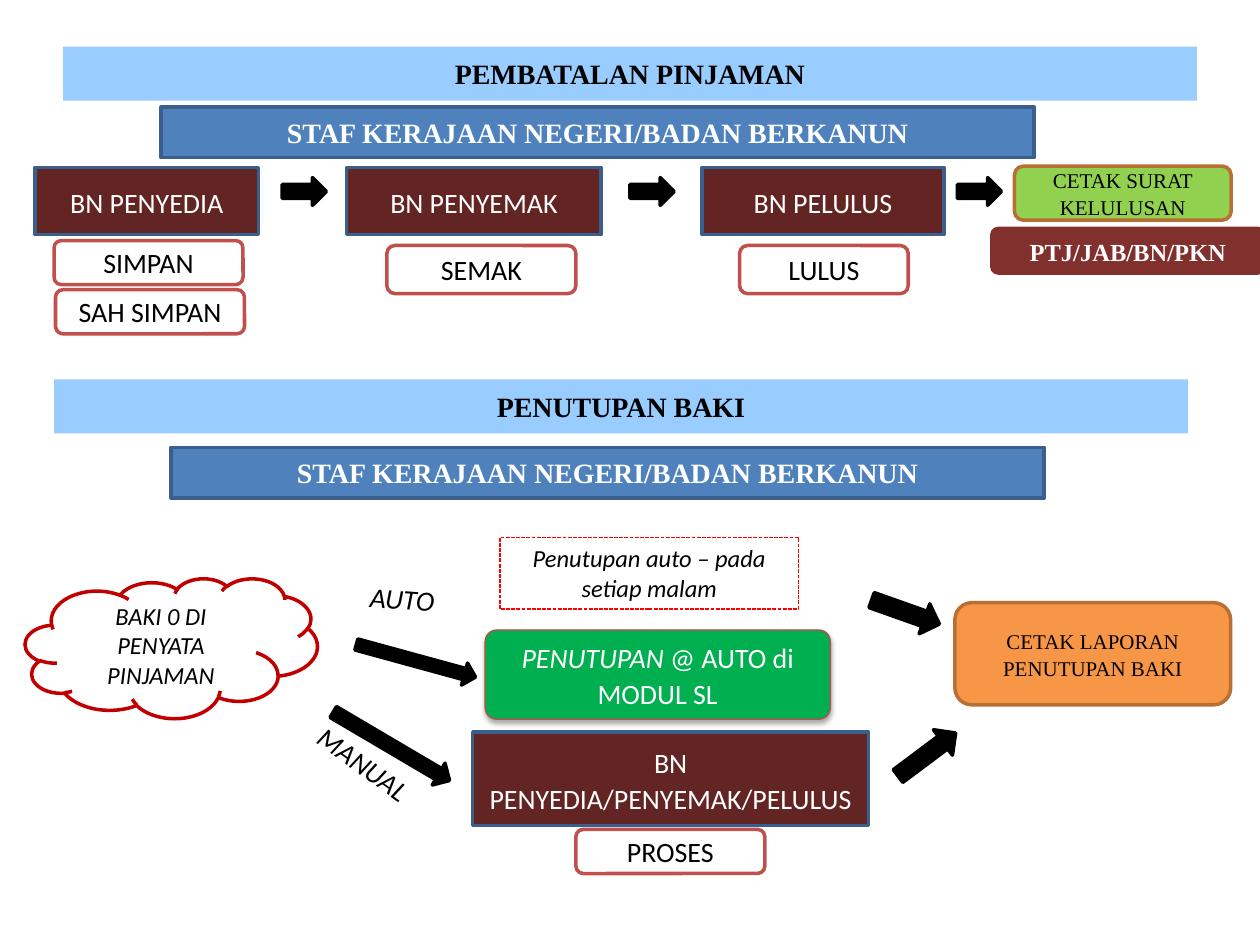
from dataclasses import dataclass
from lxml import etree
from pptx import Presentation
from pptx.dml.color import RGBColor
from pptx.enum.dml import MSO_LINE
from pptx.enum.shapes import MSO_SHAPE
from pptx.enum.text import MSO_ANCHOR, MSO_AUTO_SIZE, PP_ALIGN
from pptx.oxml import parse_xml
from pptx.oxml.ns import nsdecls, qn
from pptx.util import Cm, Pt

RECT, ROUND = MSO_SHAPE.RECTANGLE, MSO_SHAPE.ROUNDED_RECTANGLE
ARROW, CLOUD = MSO_SHAPE.RIGHT_ARROW, MSO_SHAPE.CLOUD
MIDDLE, TOP = MSO_ANCHOR.MIDDLE, MSO_ANCHOR.TOP
CENTER, LEFT = PP_ALIGN.CENTER, PP_ALIGN.LEFT
NO_FIT, DASH = MSO_AUTO_SIZE.NONE, MSO_LINE.SQUARE_DOT
SERIF, SANS = "Times New Roman", "Calibri"
STAFF = "STAF KERAJAAN NEGERI/BADAN BERKANUN"


@dataclass
class Look:
    form: int = RECT
    fill: str = ""
    line: str = ""
    width: float = 2
    ink: str = "000000"
    size: int = 16
    font: str = SANS
    bold: bool = False
    italic: bool = False
    gap: float = 1
    after: int = 0
    align: int = CENTER
    anchor: int = MIDDLE


BANNER = Look(fill="99CCFF", font=SERIF, bold=True)
GROUP = Look(fill="4F81BD", line="3A5F8C", ink="FFFFFF", font=SERIF, bold=True)
ROLE = Look(fill="632523", line="3A5F8C", ink="FFFFFF", gap=1.07, after=8)
TASK = Look(ROUND, "FFFFFF", "C0504D")
LETTER = Look(ROUND, "92D050", "B76F34", size=12, font=SERIF, gap=1.06, after=8)
REPORT = Look(ROUND, "F79646", "B76F34", size=12, font=SERIF, gap=1.06, after=8)
OFFICE = Look(ROUND, "82302E", ink="FFFFFF", size=14, font=SERIF, bold=True,
              gap=1.06, after=8)
POINTER = Look(ARROW, "000000", "000000")
START = Look(CLOUD, "FFFFFF", "C00000", size=14, italic=True)
AUTO = Look(ROUND, "00B050", "BF4C48", 0.75, "FFFFFF", gap=1.07, after=8)
NOTE = Look(line="FF0000", width=0.75, size=14, italic=True, anchor=TOP)
LABEL = Look(italic=True, align=LEFT, anchor=TOP)


def color(code):
    return RGBColor.from_string(code)


def paint(shape, look):
    """Set the fill and line of a shape."""
    if look.fill:
        shape.fill.solid()
        shape.fill.fore_color.rgb = color(look.fill)
    else:
        shape.fill.background()
    if look.line:
        shape.line.color.rgb = color(look.line)
        shape.line.width = Pt(look.width)
    else:
        shape.line.fill.background()


def write(shape, text, look):
    frame = shape.text_frame
    frame.word_wrap = True
    frame.auto_size = NO_FIT
    frame.vertical_anchor = look.anchor
    frame.text = text
    para = frame.paragraphs[0]
    para.alignment = look.align
    para.line_spacing = look.gap
    para.space_after = Pt(look.after)
    for run in para.runs:
        style(run, look)


def style(run, look):
    font = run.font
    font.name, font.size = look.font, Pt(look.size)
    font.bold, font.italic = look.bold, look.italic
    font.color.rgb = color(look.ink)


def put(slide, base, box, look, text="", turn=0):
    """Add a shape at a box given in cm from the base point."""
    x, y, w, h = box
    shape = slide.shapes.add_shape(
        look.form, Cm(base[0] + x), Cm(base[1] + y), Cm(w), Cm(h))
    shape.shadow.inherit = False
    shape.rotation = turn
    paint(shape, look)
    if text:
        write(shape, text, look)
    return shape


def label(slide, base, box, text, turn):
    x, y, w, h = box
    shape = slide.shapes.add_textbox(
        Cm(base[0] + x), Cm(base[1] + y), Cm(w), Cm(h))
    shape.rotation = turn
    write(shape, text, LABEL)


def shade(shape):
    """Add a soft shadow below a shape."""
    effects = shape.element.spPr.find(qn("a:effectLst"))
    drop = parse_xml(
        f'<a:outerShdw {nsdecls("a")} blurRad="{Pt(3.1)}" dist="{Pt(1.8)}" '
        'dir="5400000" rotWithShape="0"/>')
    tint = etree.SubElement(drop, qn("a:srgbClr"), val="000000")
    etree.SubElement(tint, qn("a:alpha"), val="35000")
    effects.append(drop)


def cancel(slide, base):
    """Draw the loan cancellation flow under the slide title."""
    title = slide.shapes.title
    title.left, title.top = Cm(base[0] + 1.27), Cm(base[1])
    title.width, title.height = Cm(22.86), Cm(1.09)
    paint(title, BANNER)
    write(title, "PEMBATALAN PINJAMAN", BANNER)
    put(slide, base, (3.25, 1.22, 17.6, 1.02), GROUP, STAFF)
    for x, w, text in ((0.71, 4.5, "BN PENYEDIA"),
                       (6.99, 5.13, "BN PENYEMAK"),
                       (14.15, 4.88, "BN PELULUS")):
        put(slide, base, (x, 2.44, w, 1.35), ROLE, text)
    for x in (5.69, 12.7, 19.3):
        put(slide, base, (x, 2.64, 0.89, 0.56), POINTER)
    for box, text in (((1.09, 3.91, 3.81, 0.89), "SIMPAN"),
                      ((1.12, 4.9, 3.81, 0.89), "SAH SIMPAN"),
                      ((7.8, 4.01, 3.81, 0.97), "SEMAK"),
                      ((14.91, 4.01, 3.4, 0.97), "LULUS")):
        put(slide, base, box, TASK, text)
    put(slide, base, (20.45, 2.41, 4.37, 1.09), LETTER, "CETAK SURAT KELULUSAN")
    put(slide, base, (19.96, 3.63, 5.56, 0.97), OFFICE, "PTJ/JAB/BN/PKN")


def close(slide, base):
    """Draw the balance closing flow with its two branches."""
    put(slide, base, (1.09, 0, 22.86, 1.09), BANNER, "PENUTUPAN BAKI")
    put(slide, base, (3.45, 1.37, 17.6, 1.02), GROUP, STAFF)
    put(slide, base, (0.51, 4.01, 5.89, 2.82), START,
        "BAKI 0 DI PENYATA PINJAMAN")
    auto = put(slide, base, (9.78, 5.05, 6.96, 1.8), AUTO, "PENUTUPAN ")
    auto.adjustments[0] = 0.13
    shade(auto)
    para = auto.text_frame.paragraphs[0]
    para.runs[0].font.italic = True
    rest = para.add_run()
    rest.text = "@ AUTO di MODUL SL"
    style(rest, AUTO)
    note = put(slide, base, (10.08, 3.18, 6.02, 1.45), NOTE,
               "Penutupan auto – pada setiap malam")
    note.line.dash_style = DASH
    put(slide, base, (9.53, 7.11, 7.98, 1.88), ROLE,
        "BN PENYEDIA/PENYEMAK/PELULUS")
    put(slide, base, (11.61, 9.07, 3.81, 0.89), TASK, "PROSES")
    put(slide, base, (19.25, 4.5, 5.56, 2.06), REPORT,
        "CETAK LAPORAN PENUTUPAN BAKI")
    for box, turn in (((7.14, 5.44, 2.49, 0.46), 15.3),
                      ((6.53, 7.14, 2.72, 0.51), 30.5),
                      ((17.53, 4.37, 1.45, 0.64), 19.5),
                      ((17.96, 7.24, 1.45, 0.64), 323.2)):
        put(slide, base, box, POINTER, turn=turn)
    label(slide, base, (7.21, 3.96, 2.11, 0.94), "AUTO", 4.3)
    label(slide, base, (5.94, 7.59, 3.63, 0.94), "MANUAL", 35.6)


def main():
    deck = Presentation()
    deck.slide_width, deck.slide_height = Cm(25.4), Cm(19.05)
    slide = deck.slides.add_slide(deck.slide_layouts[5])
    cancel(slide, (0, 0.94))
    close(slide, (0, 7.65))
    deck.save("out.pptx")


if __name__ == "__main__":
    main()
